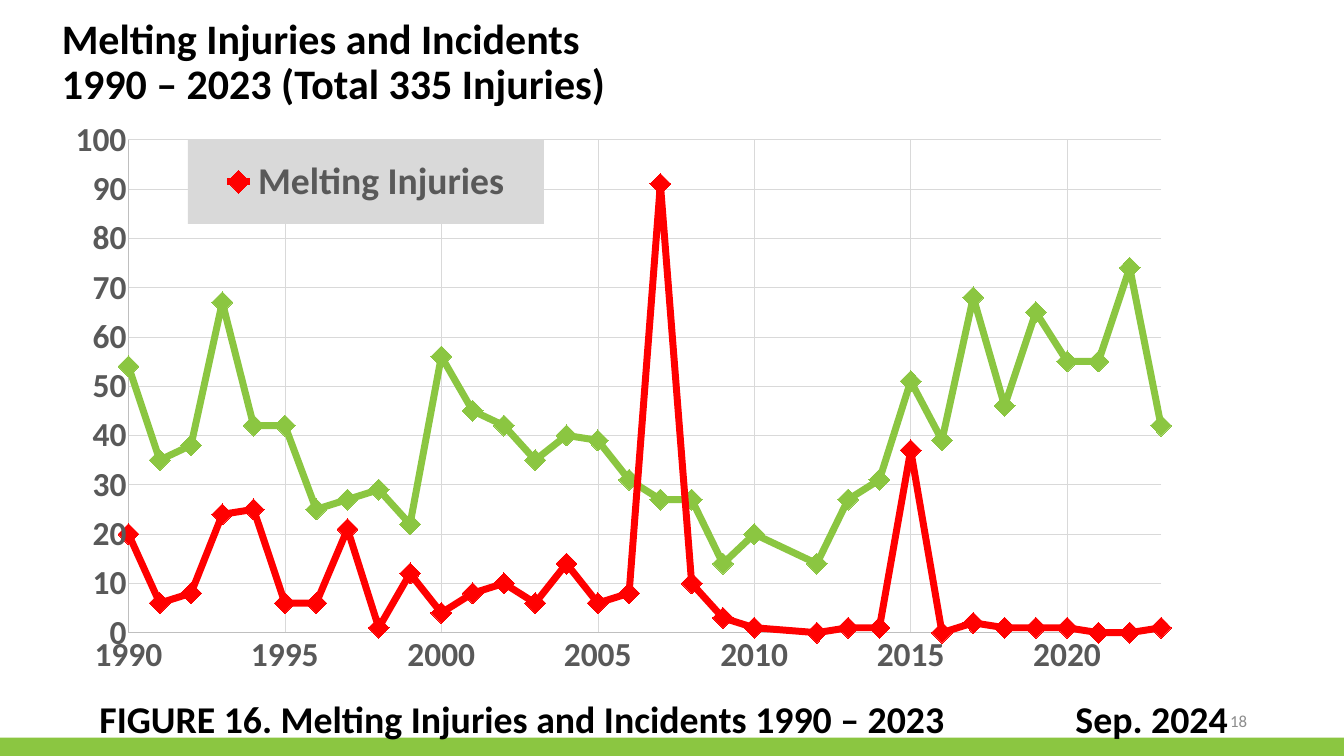
import pptx
import pptx.chart.data
import pptx.dml.color
import pptx.enum.chart
import pptx.enum.shapes
import pptx.enum.text
import pptx.oxml
import pptx.oxml.ns
import pptx.util

RGBColor = pptx.dml.color.RGBColor
GREEN = RGBColor(0x8B, 0xC6, 0x41)
RED = RGBColor(0xFF, 0x00, 0x00)
BLACK = RGBColor(0x00, 0x00, 0x00)
NUMBER_GREY = RGBColor(0x8C, 0x8C, 0x8C)
LABEL_GREY = RGBColor(0x59, 0x59, 0x59)
AXIS_GREY = RGBColor(0xBF, 0xBF, 0xBF)
GRID_GREY = RGBColor(0xD9, 0xD9, 0xD9)
FONT = "Calibri"
EMU_PER_PX = 9525

YEARS = [year for year in range(1990, 2024) if year != 2011]
INJURIES = [20, 6, 8, 24, 25, 6, 6, 21, 1, 12, 4, 8, 10, 6, 14, 6, 8, 91, 10, 3, 1,
            0, 1, 1, 37, 0, 2, 1, 1, 1, 0, 0, 1]
INCIDENTS = [54, 35, 38, 67, 42, 42, 25, 27, 29, 22, 56, 45, 42, 35, 40, 39, 31, 27,
             27, 14, 20, 14, 27, 31, 51, 39, 68, 46, 65, 55, 55, 74, 42]
SERIES = [("Melting Injuries", INJURIES, RED), ("Melting Incidents", INCIDENTS, GREEN)]


def px(*lengths):
    """Turn pixel lengths into a list of EMU lengths."""
    return [pptx.util.Emu(length * EMU_PER_PX) for length in lengths]


def style_font(font, size, color, bold=True):
    """Set the face, size, colour and weight of a font."""
    font.name = FONT
    font.size = pptx.util.Pt(size)
    font.bold = bold
    font.color.rgb = color


def style_line(line, color, width):
    """Set the colour and width in points of a line."""
    line.color.rgb = color
    line.width = pptx.util.Pt(width)


def chart_xml(body):
    """Parse a chart element, written with the c and a prefixes."""
    tag, rest = body.split(">", 1)
    namespaces = pptx.oxml.ns.nsdecls("c", "a")
    return pptx.oxml.parse_xml(f"{tag} {namespaces}>{rest}")


def manual_layout(left, top, width, height, inner=False):
    """Make a layout element from fractions of the chart."""
    target = '<c:layoutTarget val="inner"/>' if inner else ""
    return chart_xml(
        f'<c:layout><c:manualLayout>{target}<c:xMode val="edge"/><c:yMode val="edge"/>'
        f'<c:x val="{left}"/><c:y val="{top}"/><c:w val="{width}"/><c:h val="{height}"/>'
        "</c:manualLayout></c:layout>")


def add_footer_bar(slide, box):
    """Draw the green bar along the bottom edge."""
    bar = slide.shapes.add_shape(pptx.enum.shapes.MSO_SHAPE.RECTANGLE, *px(*box))
    bar.shadow.inherit = False
    bar.fill.solid()
    bar.fill.fore_color.rgb = GREEN
    bar.line.fill.background()


def add_title(slide, box):
    """Place and format the two-line title."""
    title = slide.shapes.title
    title.left, title.top, title.width, title.height = px(*box)
    frame = title.text_frame
    frame.auto_size = pptx.enum.text.MSO_AUTO_SIZE.NONE
    frame.vertical_anchor = pptx.enum.text.MSO_ANCHOR.TOP
    frame.text = "Melting Injuries and Incidents\n1990 – 2023 (Total 335 Injuries)"
    for paragraph in frame.paragraphs:
        paragraph.alignment = pptx.enum.text.PP_ALIGN.LEFT
        paragraph.line_spacing = 0.9
        style_font(paragraph.runs[0].font, 60, BLACK)


def add_text(slide, box, text):
    """Add a wrapping text box and return its frame."""
    frame = slide.shapes.add_textbox(*px(*box)).text_frame
    frame.word_wrap = True
    frame.text = text
    return frame


def add_caption(slide, box, date_offset):
    """Add the figure caption with its date at a tab stop."""
    frame = add_text(
        slide, box, "FIGURE 16. Melting Injuries and Incidents 1990 – 2023\tSep. 2024")
    paragraph = frame.paragraphs[0]
    paragraph.line_spacing = 0.9
    tabs = pptx.oxml.parse_xml(
        f'<a:tabLst {pptx.oxml.ns.nsdecls("a")}>'
        f'<a:tab pos="{date_offset * EMU_PER_PX}" algn="l"/></a:tabLst>')
    paragraph.line_spacing = 0.9
    paragraph._p.get_or_add_pPr().append(tabs)
    for run in paragraph.runs:
        style_font(run.font, 54, BLACK)


def add_slide_number(slide, box):
    """Add the small grey slide number."""
    frame = add_text(slide, box, "18")
    frame.vertical_anchor = pptx.enum.text.MSO_ANCHOR.MIDDLE
    frame.paragraphs[0].alignment = pptx.enum.text.PP_ALIGN.RIGHT
    style_font(frame.paragraphs[0].runs[0].font, 24, NUMBER_GREY, bold=False)


def style_axis(axis, minimum, maximum, step):
    """Set the scale, labels and gridlines of an axis."""
    axis.minimum_scale = minimum
    axis.maximum_scale = maximum
    axis.major_unit = step
    axis.major_tick_mark = pptx.enum.chart.XL_TICK_MARK.NONE
    axis.minor_tick_mark = pptx.enum.chart.XL_TICK_MARK.NONE
    axis.has_major_gridlines = True
    style_line(axis.major_gridlines.format.line, GRID_GREY, 0.75)
    style_line(axis.format.line, AXIS_GREY, 0.75)
    style_font(axis.tick_labels.font, 48, LABEL_GREY)
    axis.tick_labels.number_format = "General"
    axis.tick_labels.number_format_is_linked = False


def style_legend(chart):
    """Show only the injuries entry on a grey panel over the plot."""
    chart.has_legend = True
    chart.legend.position = pptx.enum.chart.XL_LEGEND_POSITION.BOTTOM
    chart.legend.include_in_layout = True
    style_font(chart.legend.font, 54, LABEL_GREY)
    legend = chart.element.xpath(".//c:legend")[0]
    for layout in legend.xpath("c:layout"):
        legend.remove(layout)
    position = legend.xpath("c:legendPos")[0]
    position.addnext(manual_layout(0.09, 0.05, 0.3, 0.13))
    position.addnext(chart_xml(
        '<c:legendEntry><c:idx val="1"/><c:delete val="1"/></c:legendEntry>'))
    legend.xpath("c:overlay")[0].addnext(chart_xml(
        f'<c:spPr><a:solidFill><a:srgbClr val="{GRID_GREY}"/></a:solidFill></c:spPr>'))


def add_incident_chart(slide, box):
    """Add the scatter chart of injuries and incidents by year."""
    data = pptx.chart.data.XyChartData()
    for name, values, _ in SERIES:
        series = data.add_series(name)
        for year, value in zip(YEARS, values):
            series.add_data_point(year, value)
    chart = slide.shapes.add_chart(
        pptx.enum.chart.XL_CHART_TYPE.XY_SCATTER_LINES, *px(*box), data).chart
    chart.has_title = False
    style_font(chart.font, 10, BLACK, bold=False)
    chart.plots[0].vary_by_categories = False
    for series, (_, _, color) in zip(chart.plots[0].series, SERIES):
        series.smooth = False
        style_line(series.format.line, color, 10)
        series.marker.style = pptx.enum.chart.XL_MARKER_STYLE.DIAMOND
        series.marker.size = 30
        series.marker.format.fill.solid()
        series.marker.format.fill.fore_color.rgb = color
        series.marker.format.line.fill.background()
    style_axis(chart.category_axis, 1990, 2023, 5)
    style_axis(chart.value_axis, 0, 100, 10)
    style_legend(chart)
    plot_area = chart.element.xpath(".//c:plotArea")[0]
    for layout in plot_area.xpath("c:layout"):
        plot_area.remove(layout)
    plot_area.insert(0, manual_layout(0.04, 0.05, 0.87, 0.76, inner=True))


def main():
    """Build the slide and save the presentation."""
    presentation = pptx.Presentation()
    presentation.slide_width, presentation.slide_height = px(2560, 1440)
    slide = presentation.slides.add_slide(presentation.slide_layouts[5])
    add_footer_bar(slide, (0, 1405, 2560, 35))
    add_slide_number(slide, (1809, 1334, 576, 77))
    add_title(slide, (108, 29, 1805, 133))
    add_caption(slide, (180, 1330, 2237, 203), 1859)
    add_incident_chart(slide, (144, 204, 2271, 1236))
    presentation.save("out.pptx")


if __name__ == "__main__":
    main()
